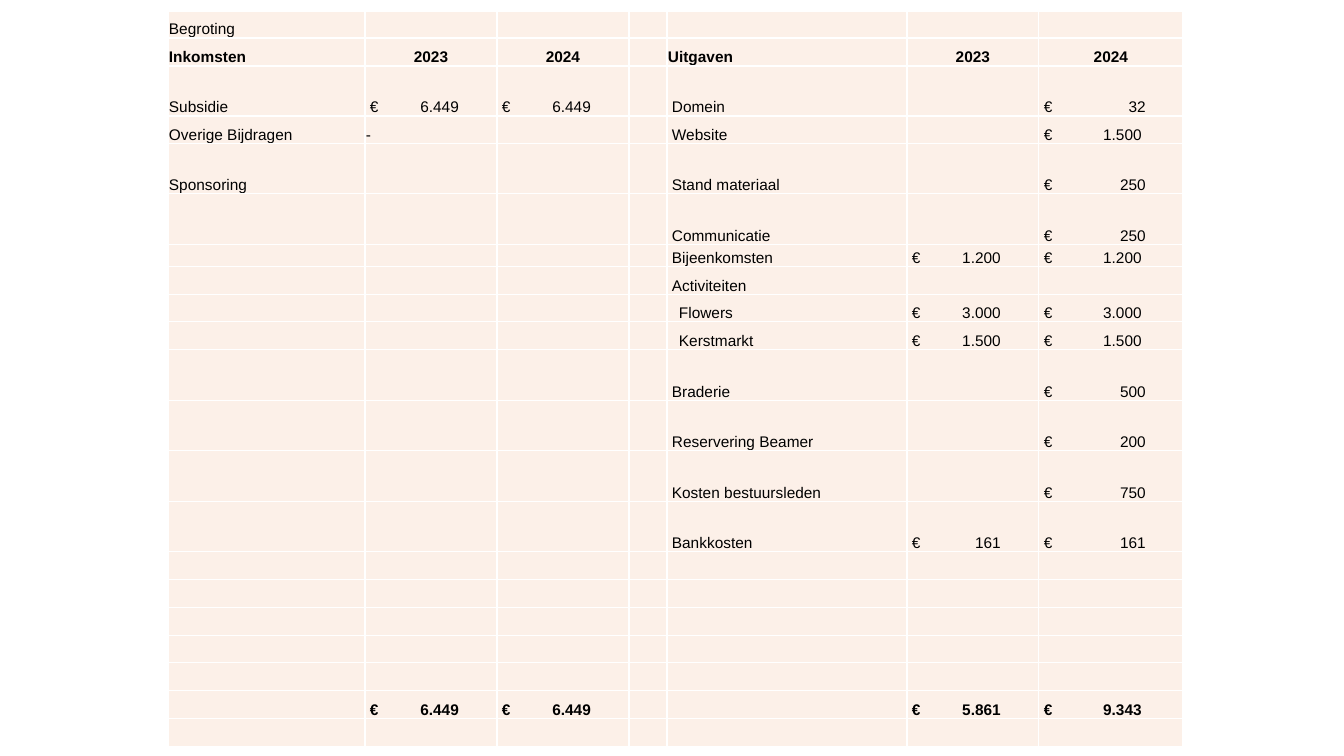
"""Build the budget slide with income and spending for 2023 and 2024."""
from itertools import pairwise

from lxml.etree import SubElement
from pptx import Presentation
from pptx.dml.color import RGBColor
from pptx.enum.text import MSO_ANCHOR, PP_ALIGN
from pptx.oxml.ns import qn
from pptx.util import Pt

BLANK = ("", "", "", "", "", "", "")
BUDGET = [
    ("Begroting", "", "", "", "", "", ""),
    ("Inkomsten", "2023", "2024", "", "Uitgaven", "2023", "2024"),
    ("Subsidie", "6.449", "6.449", "", "Domein", "", "32"),
    ("Overige Bijdragen", "-", "", "", "Website", "", "1.500"),
    ("Sponsoring", "", "", "", "Stand materiaal", "", "250"),
    ("", "", "", "", "Communicatie", "", "250"),
    ("", "", "", "", "Bijeenkomsten", "1.200", "1.200"),
    ("", "", "", "", "Activiteiten", "", ""),
    ("", "", "", "", "Flowers", "3.000", "3.000"),
    ("", "", "", "", "Kerstmarkt", "1.500", "1.500"),
    ("", "", "", "", "Braderie", "", "500"),
    ("", "", "", "", "Reservering Beamer", "", "200"),
    ("", "", "", "", "Kosten bestuursleden", "", "750"),
    ("", "", "", "", "Bankkosten", "161", "161"),
    *[BLANK] * 5,
    ("", "6.449", "6.449", "", "", "5.861", "9.343"),
    BLANK,
]
NESTED = ("Flowers", "Kerstmarkt")
HEAD, TOTAL = 1, 19
COST, LAST = 4, 6
COLS = [168, 365, 497, 629, 667, 907, 1039, 1183]
ROWS = [11, 38, 66, 116, 144, 194, 245, 267, 295, 322, 350, 401, 451, 502,
        552, 580, 608, 636, 663, 691, 719, 747]

CREAM = RGBColor(0xFC, 0xF0, 0xE8)
WHITE = RGBColor(0xFF, 0xFF, 0xFF)
BLACK = RGBColor(0, 0, 0)


def px(num):
    return round(num * 914400 / 100.8)


def edge(cell):
    props = cell._tc.get_or_add_tcPr()
    for side in ("a:lnL", "a:lnR", "a:lnT", "a:lnB"):
        line = SubElement(props, qn(side), w=str(Pt(1)))
        fill = SubElement(line, qn("a:solidFill"))
        SubElement(fill, qn("a:srgbClr"), val=str(WHITE))


def stop(para, place):
    tabs = SubElement(para._p.get_or_add_pPr(), qn("a:tabLst"))
    SubElement(tabs, qn("a:tab"), pos=str(px(place)), algn="r")


def fill_cell(cell, text, row, col):
    edge(cell)
    cell.fill.solid()
    cell.fill.fore_color.rgb = CREAM
    cell.vertical_anchor = MSO_ANCHOR.BOTTOM
    money = row != HEAD and text[:1].isdigit()
    item = col == COST and row != HEAD
    left = 12 if text in NESTED else 5 if money or item else 1
    cell.margin_left = px(left)
    cell.margin_top = cell.margin_right = px(1)
    cell.margin_bottom = 0
    para = cell.text_frame.paragraphs[0]
    if not text:
        SubElement(para._p, qn("a:endParaRPr"), sz="1100")
        return
    if money:
        wide = 89 if col != LAST else 98 if "." in text else 102
        stop(para, wide)
        text = "€\t" + text
    elif row == HEAD and text.isdigit():
        para.alignment = PP_ALIGN.CENTER
    para.text = text
    for run in para.runs:
        run.font.name = "Arial"
        run.font.size = Pt(11)
        run.font.bold = row in (HEAD, TOTAL)
        run.font.color.rgb = BLACK


def main():
    deck = Presentation()
    deck.slide_width, deck.slide_height = px(1344), px(756)
    slide = deck.slides.add_slide(deck.slide_layouts[6])
    table = slide.shapes.add_table(
        len(BUDGET), len(BLANK), px(COLS[0]), px(ROWS[0]),
        px(COLS[-1] - COLS[0]), px(ROWS[-1] - ROWS[0])).table
    table.first_row = table.horz_banding = False
    for col, (start, end) in zip(table.columns, pairwise(COLS)):
        col.width = px(end - start)
    for row, (start, end) in zip(table.rows, pairwise(ROWS)):
        row.height = px(end - start)
    for row, texts in enumerate(BUDGET):
        for col, text in enumerate(texts):
            fill_cell(table.cell(row, col), text, row, col)
    deck.save("out.pptx")


if __name__ == "__main__":
    main()
